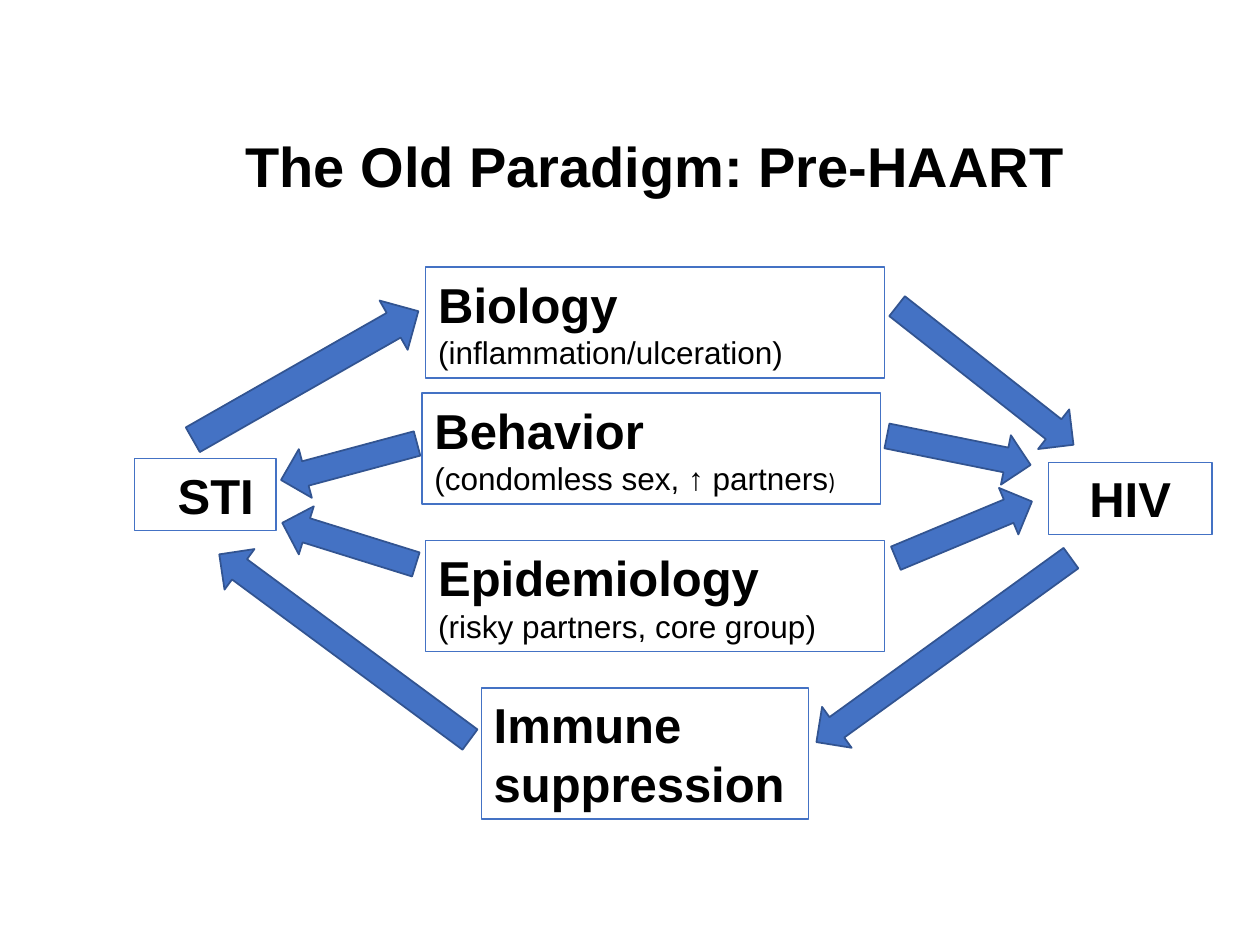
import math
from dataclasses import dataclass

import pptx
import pptx.dml.color
import pptx.enum.shapes
import pptx.enum.text
import pptx.util
from pptx.enum.shapes import MSO_SHAPE
from pptx.enum.text import MSO_ANCHOR, PP_ALIGN


@dataclass(frozen=True)
class Theme:
    text: str = "000000"
    accent: str = "4472C4"
    arrow_edge: str = "325491"
    font: str = "Arial"
    small_font: str = "Calibri"
    title_size: float = 32
    heading_size: float = 28
    detail_size: float = 18
    small_size: float = 13.5
    box_line: float = 0.75
    arrow_line: float = 1


@dataclass(frozen=True)
class Span:
    text: str
    size: float
    bold: bool = False
    font: str = Theme.font


@dataclass(frozen=True)
class Box:
    """Position and size in grid columns and rows."""
    left: float
    top: float
    width: float
    height: float
    lines: tuple[tuple[Span, ...], ...]
    align: PP_ALIGN = PP_ALIGN.LEFT
    indent: float = 1


@dataclass(frozen=True)
class Arrow:
    """Tail and tip as (column, row), thickness in columns."""
    tail: tuple[float, float]
    tip: tuple[float, float]
    thickness: float = 4


THEME = Theme()
COLUMNS, ROWS = 100, 75

deck = pptx.Presentation()
deck.slide_width = pptx.util.Inches(10)
deck.slide_height = pptx.util.Inches(7.5)
page = deck.slides.add_slide(deck.slide_layouts[6])


def across(columns: float) -> int:
    return round(deck.slide_width * columns / COLUMNS)


def down(rows: float) -> int:
    return round(deck.slide_height * rows / ROWS)


def color(value: str) -> pptx.dml.color.RGBColor:
    return pptx.dml.color.RGBColor.from_string(value)


def heading(text: str) -> tuple[Span, ...]:
    return (Span(text, THEME.heading_size, True),)


def detail(text: str) -> tuple[Span, ...]:
    return (Span(text, THEME.detail_size),)


def write_text(shape, box: Box) -> None:
    frame = shape.text_frame
    frame.word_wrap = True
    frame.vertical_anchor = MSO_ANCHOR.MIDDLE
    frame.margin_left = across(box.indent)
    for index, spans in enumerate(box.lines):
        para = frame.paragraphs[0] if index == 0 else frame.add_paragraph()
        para.alignment = box.align
        for span in spans:
            run = para.add_run()
            run.text = span.text
            run.font.name = span.font
            run.font.size = pptx.util.Pt(span.size)
            run.font.bold = span.bold
            run.font.color.rgb = color(THEME.text)


def draw_box(box: Box) -> None:
    shape = page.shapes.add_shape(MSO_SHAPE.RECTANGLE, across(box.left), down(box.top),
                                  across(box.width), down(box.height))
    shape.shadow.inherit = False
    shape.fill.background()
    shape.line.color.rgb = color(THEME.accent)
    shape.line.width = pptx.util.Pt(THEME.box_line)
    write_text(shape, box)


def draw_arrow(arrow: Arrow) -> None:
    """Turn a down arrow about its centre so it runs from tail to tip."""
    (x1, y1), (x2, y2) = arrow.tail, arrow.tip
    length = math.dist(arrow.tail, arrow.tip)
    shape = page.shapes.add_shape(
        MSO_SHAPE.DOWN_ARROW,
        across((x1 + x2 - arrow.thickness) / 2), down((y1 + y2 - length) / 2),
        across(arrow.thickness), down(length))
    shape.rotation = math.degrees(math.atan2(x1 - x2, y2 - y1)) % 360
    shape.shadow.inherit = False
    shape.fill.solid()
    shape.fill.fore_color.rgb = color(THEME.accent)
    shape.line.color.rgb = color(THEME.arrow_edge)
    shape.line.width = pptx.util.Pt(THEME.arrow_line)


# Title
title = Box(18.5, 9.9, 70.1, 6.4,
            ((Span("The Old Paradigm: Pre-HAART", THEME.title_size, True),),))
write_text(page.shapes.add_textbox(across(title.left), down(title.top),
                                   across(title.width), down(title.height)), title)

# The two infections and the factors between them
FACTOR = (36.4, 8.8)
BOXES = (
    Box(10.7, 36.4, 11.2, 5.7, (heading("STI"),), indent=3.4),
    Box(83.2, 36.7, 13, 5.7, (heading("HIV"),), PP_ALIGN.CENTER),
    Box(33.8, 21.2, *FACTOR, (heading("Biology"), detail("(inflammation/ulceration)"))),
    Box(33.5, 31.2, *FACTOR, (
        heading("Behavior"),
        detail("(condomless sex, ↑ partners")
        + (Span(")", THEME.small_size, font=THEME.small_font),))),
    Box(33.8, 42.9, *FACTOR, (heading("Epidemiology"), detail("(risky partners, core group)"))),
    Box(38.2, 54.6, 26, 10.4, (heading("Immune"), heading("suppression"))),
)
for item in BOXES:
    draw_box(item)

# Arrows: STI side, then HIV side, from top to bottom
ARROWS = (
    Arrow((15.3, 34.9), (33.2, 24.7), 4.5),
    Arrow((33.1, 35.2), (22.3, 38.1)),
    Arrow((33, 44.8), (22.4, 41.5)),
    Arrow((37.3, 58.7), (17.4, 44)),
    Arrow((71.2, 24.3), (85.2, 35.3)),
    Arrow((70.4, 34.6), (81.8, 36.9)),
    Arrow((71.1, 44.3), (81.9, 39.8)),
    Arrow((85, 44.3), (64.8, 58.9)),
)
for item in ARROWS:
    draw_arrow(item)

deck.save("out.pptx")
